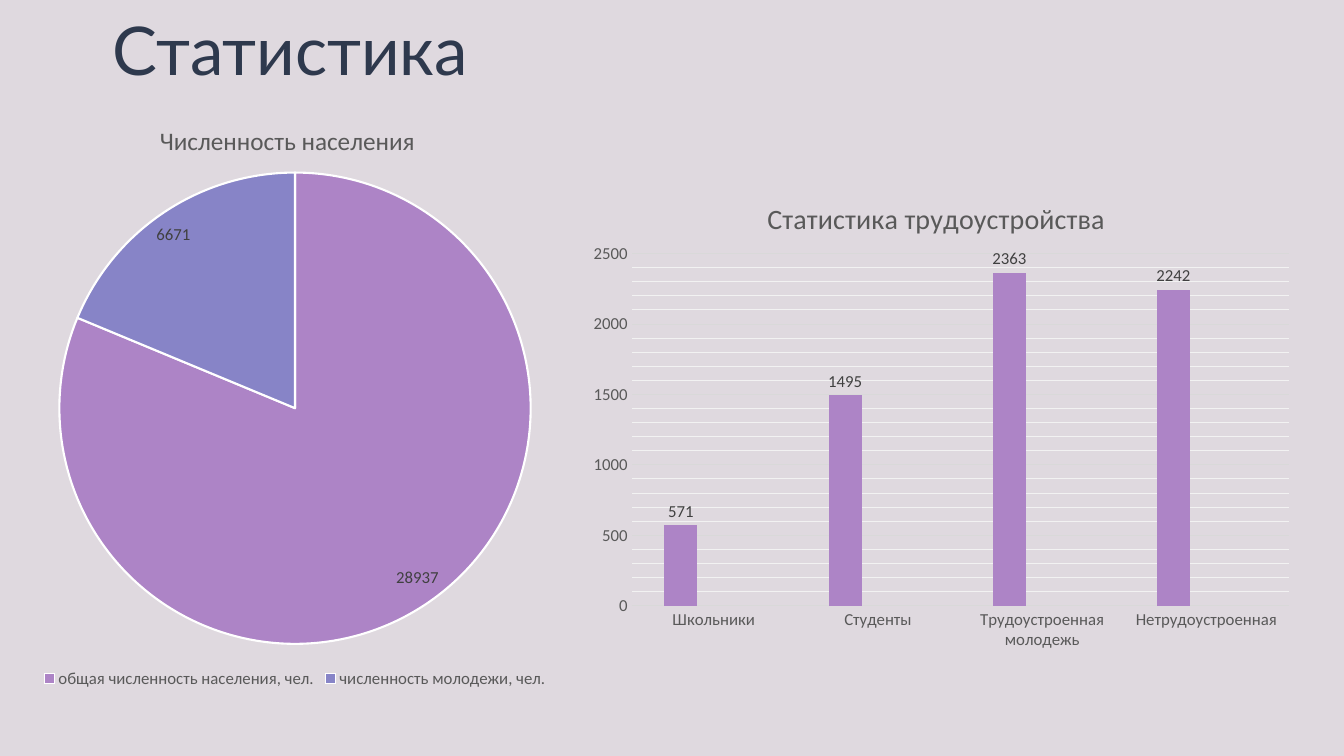
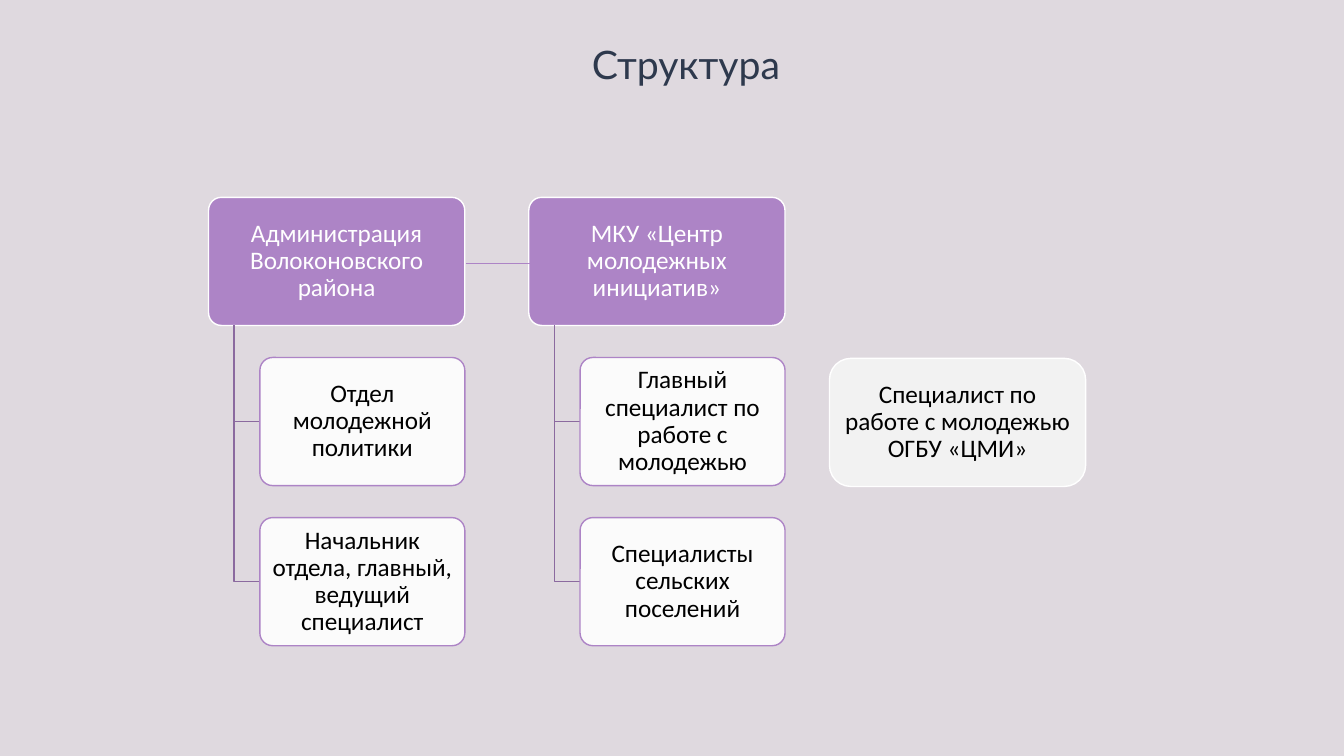
from lxml.etree import SubElement
from pptx import Presentation
from pptx.chart.data import CategoryChartData
from pptx.dml.color import RGBColor
from pptx.enum.chart import XL_CHART_TYPE as ChartType
from pptx.enum.chart import XL_LABEL_POSITION as LabelPos
from pptx.enum.chart import XL_LEGEND_POSITION as LegendPos
from pptx.enum.chart import XL_TICK_MARK as Tick
from pptx.enum.shapes import MSO_CONNECTOR as Connector
from pptx.enum.shapes import MSO_SHAPE as Shape
from pptx.enum.text import MSO_ANCHOR as Anchor
from pptx.enum.text import MSO_AUTO_SIZE as AutoSize
from pptx.enum.text import PP_ALIGN as Align
from pptx.oxml.ns import qn
from pptx.util import Pt

COLORS = {
    "background": "DFD9DF", "heading": "2E394D", "violet": "AD84C6",
    "blue": "8784C7", "slate": "5D739A", "branch": "8B6A9F",
    "white": "FFFFFF", "pale": "F2F2F2", "black": "000000",
    "caption": "595959", "value": "404040", "grid": "D9D9D9",
}
TITLE_FONT, BODY_FONT = "Lato", "Calibri"


def rgb(name):
    return RGBColor.from_string(COLORS[name])


def points(*lengths):
    return [Pt(length) for length in lengths]


def style_font(font, size, color, family=BODY_FONT):
    font.size, font.name, font.bold = Pt(size), family, False
    font.color.rgb = rgb(color)


def style_line(line, color, width):
    line.color.rgb = rgb(color)
    line.width = Pt(width)


def style_minor_grid(axis, color, width):
    grid = axis._element.find(qn("c:minorGridlines"))
    line = SubElement(SubElement(grid, qn("c:spPr")), qn("a:ln"))
    line.set("w", str(Pt(width)))
    fill = SubElement(line, qn("a:solidFill"))
    SubElement(fill, qn("a:srgbClr")).set("val", COLORS[color])


def add_titled_slide(deck, heading, box, size):
    slide = deck.slides.add_slide(deck.slide_layouts[5])
    title = slide.shapes.title
    title.left, title.top, title.width, title.height = points(*box)
    frame = title.text_frame
    frame.text = heading
    frame.auto_size, frame.vertical_anchor = AutoSize.NONE, Anchor.TOP
    frame.paragraphs[0].alignment = Align.LEFT
    style_font(frame.paragraphs[0].runs[0].font, size, "heading", TITLE_FONT)
    return slide


def set_layout(parent, index, target=None, **fractions):
    for previous in parent.findall(qn("c:layout")):
        parent.remove(previous)
    layout = SubElement(parent, qn("c:layout"))
    parent.insert(index, layout)
    manual = SubElement(layout, qn("c:manualLayout"))
    if target:
        SubElement(manual, qn("c:layoutTarget")).set("val", target)
    for axis in "xy":
        SubElement(manual, qn(f"c:{axis}Mode")).set("val", "edge")
    for key, fraction in fractions.items():
        SubElement(manual, qn(f"c:{key}")).set("val", str(fraction))


def add_captioned_chart(slide, kind, box, data, caption, size, caption_at, plot_at):
    chart = slide.shapes.add_chart(kind, *points(*box), data).chart
    style_font(chart.font, 10, "black")
    chart.has_title = True
    frame = chart.chart_title.text_frame
    frame.text = caption
    style_font(frame.paragraphs[0].runs[0].font, size, "caption")
    set_layout(chart.element.find(".//" + qn("c:title")), 1,
               **dict(zip("xy", caption_at)))
    set_layout(chart.element.find(".//" + qn("c:plotArea")), 0, "inner",
               **dict(zip("xywh", plot_at)))
    return chart


def show_values(series, position):
    labels = series.data_labels
    labels.show_value = True
    labels.position = position
    style_font(labels.font, 12, "value")


def add_population_pie(slide, box):
    data = CategoryChartData()
    data.categories = ["общая численность населения, чел.",
                       "численность молодежи, чел."]
    data.add_series("Series 1", [28937, 6671])
    chart = add_captioned_chart(slide, ChartType.PIE, box, data,
                                "Численность населения", 18,
                                (0.34, 0.04), (0.23, 0.13, 0.54, 0.79))
    pie = chart.plots[0]
    pie.vary_by_categories = True
    population = pie.series[0]
    for index, color in enumerate(("violet", "blue")):
        sector = population.points[index].format
        sector.fill.solid()
        sector.fill.fore_color.rgb = rgb(color)
        style_line(sector.line, "white", 1.5)
    show_values(population, LabelPos.BEST_FIT)
    chart.has_legend = True
    chart.legend.position = LegendPos.BOTTOM
    chart.legend.include_in_layout = False
    style_font(chart.legend.font, 12, "caption")


def add_employment_columns(slide, box):
    data = CategoryChartData()
    data.categories = ["Школьники", "Студенты", "Трудоустроенная молодежь",
                       "Нетрудоустроенная"]
    data.add_series("Series 1", [571, 1495, 2363, 2242])
    for name in ("Series 2", "Series 3"):
        data.add_series(name, [None] * 4)
    chart = add_captioned_chart(slide, ChartType.COLUMN_CLUSTERED, box, data,
                                "Статистика трудоустройства", 20,
                                (0.24, 0.05), (0.055, 0.169, 0.931, 0.695))
    chart.has_legend = False
    columns = chart.plots[0]
    columns.gap_width, columns.overlap = 199, 0
    columns.vary_by_categories = False
    for series, color in zip(columns.series, ("violet", "blue", "slate")):
        series.format.fill.solid()
        series.format.fill.fore_color.rgb = rgb(color)
        show_values(series, LabelPos.OUTSIDE_END)
    groups, scale = chart.category_axis, chart.value_axis
    for axis in (groups, scale):
        axis.major_tick_mark = axis.minor_tick_mark = Tick.NONE
        style_font(axis.tick_labels.font, 12, "caption")
    style_line(groups.format.line, "grid", 0.75)
    scale.format.line.fill.background()
    scale.minimum_scale, scale.maximum_scale = 0, 2500
    scale.major_unit, scale.minor_unit = 500, 100
    scale.has_major_gridlines = scale.has_minor_gridlines = True
    style_line(scale.major_gridlines.format.line, "grid", 0.75)
    style_minor_grid(scale, "pale", 0.75)


def add_card(slide, box, label, fill, border, ink, outline=Shape.ROUNDED_RECTANGLE):
    card = slide.shapes.add_shape(outline, *points(*box))
    card.shadow.inherit = False
    if outline == Shape.ROUNDED_RECTANGLE:
        card.adjustments[0] = 0.1
    card.fill.solid()
    card.fill.fore_color.rgb = rgb(fill)
    if fill == "white":
        tint = card._element.spPr.find(".//" + qn("a:srgbClr"))
        SubElement(tint, qn("a:alpha")).set("val", "90000")
    style_line(card.line, border, 1)
    frame = card.text_frame
    frame.word_wrap, frame.vertical_anchor = True, Anchor.MIDDLE
    frame.margin_left = frame.margin_right = Pt(5.5)
    frame.margin_top = frame.margin_bottom = Pt(4.6)
    frame.text = label
    paragraph = frame.paragraphs[0]
    paragraph.alignment, paragraph.line_spacing = Align.CENTER, 0.9
    style_font(paragraph.runs[0].font, 18, ink)


def add_branch(slide, x, top, bottom, right):
    builder = slide.shapes.build_freeform(*points(x, top))
    builder.add_line_segments([points(x, bottom), points(right, bottom)], close=False)
    branch = builder.convert_to_shape()
    branch.shadow.inherit = False
    branch.fill.background()
    style_line(branch.line, "branch", 1)


def add_department(slide, box, head, members):
    left, top, width, height = box
    indent, gap = width / 5, height / 4
    add_card(slide, box, head, "violet", "white", "white")
    for row, member in enumerate(members, 1):
        member_top = top + row * (height + gap)
        add_branch(slide, left + indent / 2, top + height,
                   member_top + height / 2, left + indent)
        add_card(slide, (left + indent, member_top, width - indent, height),
                 member, "white", "violet", "black")


def add_link(slide, start, end):
    link = slide.shapes.add_connector(Connector.STRAIGHT, *points(*start, *end))
    style_line(link.line, "violet", 0.5)
    SubElement(link._element.spPr, qn("a:effectLst"))


def build_statistics(deck):
    slide = add_titled_slide(deck, "Статистика", (73.5, 2, 359, 65.5), 48)
    add_population_pie(slide, (-101, 67.5, 623.5, 427))
    add_employment_columns(slide, (423.5, 120, 504, 362))


def build_structure(deck):
    slide = add_titled_slide(deck, "Структура", (415.5, 25, 189.5, 41), 28)
    left, top, width, height = 149, 141, 183, 91.5
    departments = [
        ("Администрация Волоконовского района",
         ["Отдел молодежной политики",
          "Начальник отдела, главный, ведущий специалист"]),
        ("МКУ «Центр молодежных инициатив»",
         ["Главный специалист по работе с молодежью",
          "Специалисты сельских поселений"]),
    ]
    for column, (head, members) in enumerate(departments):
        add_department(slide, (left + column * width * 1.25, top, width, height),
                       head, members)
    add_card(slide, (592.5, 256, width, height),
             "Специалист по работе с молодежью ОГБУ «ЦМИ»",
             "pale", "white", "black", Shape.FLOWCHART_ALTERNATE_PROCESS)
    add_link(slide, (333, 188), (384, 188))


def main():
    deck = Presentation()
    deck.slide_width, deck.slide_height = points(960, 540)
    backdrop = deck.slide_master.background.fill
    backdrop.solid()
    backdrop.fore_color.rgb = rgb("background")
    build_statistics(deck)
    build_structure(deck)
    deck.save("out.pptx")


if __name__ == "__main__":
    main()
